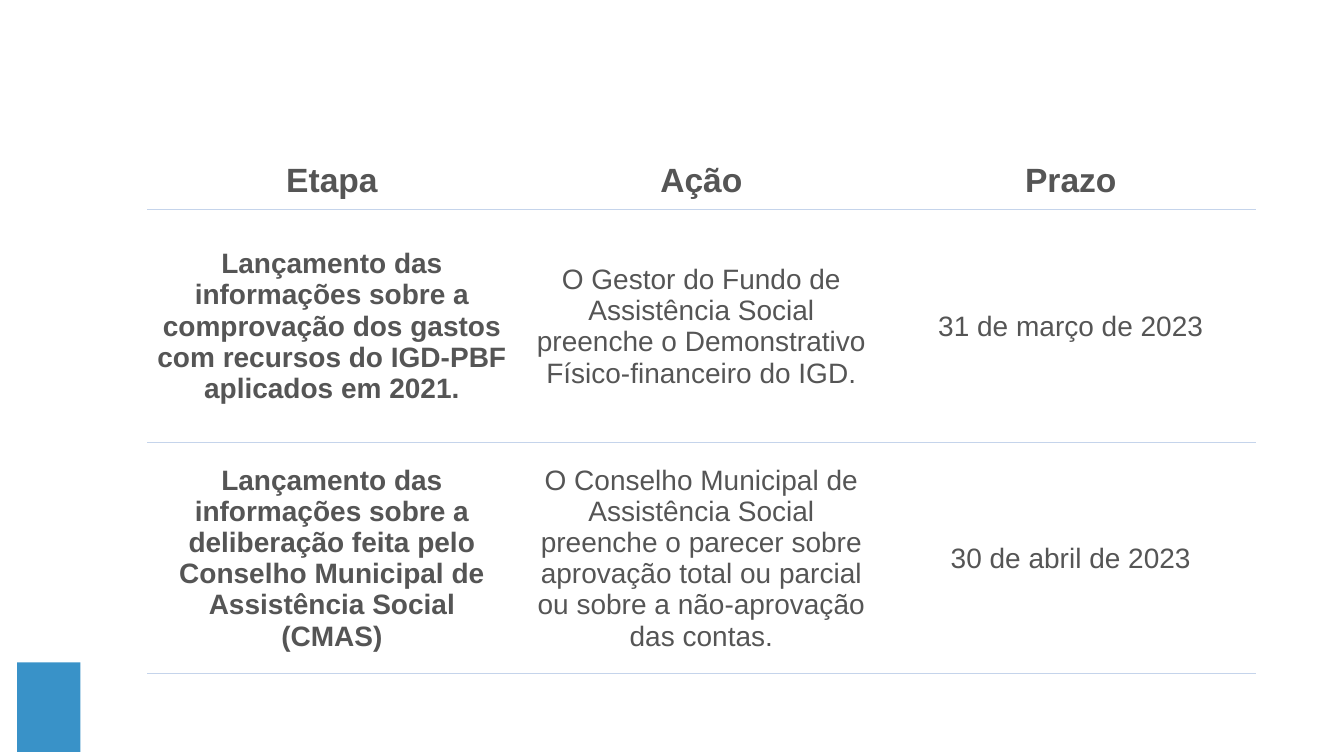
from dataclasses import dataclass

from lxml import etree
from pptx import Presentation
from pptx import util as u
from pptx.dml import color
from pptx.enum import shapes, text
from pptx.oxml import ns


@dataclass(frozen=True)
class Theme:
    """Colours, font and type sizes of the page."""
    font: str = "Arial"
    ink: str = "555555"
    paper: str = "FFFFFF"
    accent: str = "3992C8"
    rule: str = "C5D4EB"
    heading: int = 24
    body: int = 20
    rule_width: float = 0.75


class Page:
    """A blank slide with methods that draw in one theme."""

    def __init__(self, deck, theme):
        self.slide = deck.slides.add_slide(deck.slide_layouts[6])
        self.theme = theme

    def block(self, left, top, width, height):
        """Draw a plain accent rectangle."""
        box = self.slide.shapes.add_shape(
            shapes.MSO_SHAPE.RECTANGLE, *map(u.Cm, (left, top, width, height)))
        box.shadow.inherit = False
        box.fill.solid()
        box.fill.fore_color.rgb = color.RGBColor.from_string(self.theme.accent)
        box.line.fill.background()

    def table(self, left, top, column_width, heights, rows):
        """Draw a table with a heading row and a bold first column."""
        columns = len(rows[0])
        frame = self.slide.shapes.add_table(
            len(rows), columns, u.Cm(left), u.Cm(top),
            u.Cm(column_width * columns), u.Cm(sum(heights)))
        table = frame.table
        table.first_row = table.horz_banding = False
        for column in table.columns:
            column.width = u.Cm(column_width)
        for row, height in enumerate(heights):
            table.rows[row].height = u.Cm(height)
            for column, words in enumerate(rows[row]):
                heading = row == 0
                size = self.theme.heading if heading else self.theme.body
                cell = table.cell(row, column)
                self.rules(cell, "B" if heading else "TB")
                self.cell(cell, words, size, heading or column == 0)

    def rules(self, cell, ruled):
        """Rule the named sides of a cell and clear the others."""
        properties = cell._tc.get_or_add_tcPr()
        for side in "LRTB":
            line = etree.SubElement(properties, ns.qn(f"a:ln{side}"))
            if side in ruled:
                line.set("w", str(u.Pt(self.theme.rule_width)))
                fill = etree.SubElement(line, ns.qn("a:solidFill"))
                etree.SubElement(fill, ns.qn("a:srgbClr"), val=self.theme.rule)
            else:
                etree.SubElement(line, ns.qn("a:noFill"))

    def cell(self, cell, words, size, bold):
        """Fill a cell and centre its words."""
        cell.fill.solid()
        cell.fill.fore_color.rgb = color.RGBColor.from_string(self.theme.paper)
        cell.vertical_anchor = text.MSO_ANCHOR.MIDDLE
        cell.margin_left = cell.margin_right = u.Cm(0.25)
        cell.margin_top = cell.margin_bottom = u.Cm(0.2)
        cell.text_frame.text = words
        para = cell.text_frame.paragraphs[0]
        para.alignment = text.PP_ALIGN.CENTER
        for span in para.runs:
            span.font.name = self.theme.font
            span.font.size = u.Pt(size)
            span.font.bold = bold
            span.font.color.rgb = color.RGBColor.from_string(self.theme.ink)


def main():
    """Build the schedule slide and save it."""
    deck = Presentation()
    deck.slide_width, deck.slide_height = u.Cm(33.87), u.Cm(19.05)
    page = Page(deck, Theme())
    page.block(0.43, 16.69, 1.6, 2.26)
    page.table(3.71, 3.84, 9.31, (1.45, 5.87, 5.82), (
        ("Etapa", "Ação", "Prazo"),
        ("Lançamento das informações sobre a comprovação dos gastos "
         "com recursos do IGD-PBF aplicados em 2021.",
         "O Gestor do Fundo de Assistência Social preenche o "
         "Demonstrativo Físico-financeiro do IGD.",
         "31 de março de 2023"),
        ("Lançamento das informações sobre a deliberação feita pelo "
         "Conselho Municipal de Assistência Social (CMAS)",
         "O Conselho Municipal de Assistência Social preenche o parecer "
         "sobre aprovação total ou parcial ou sobre a não-aprovação "
         "das contas.",
         "30 de abril de 2023"),
    ))
    deck.save("out.pptx")


if __name__ == "__main__":
    main()
